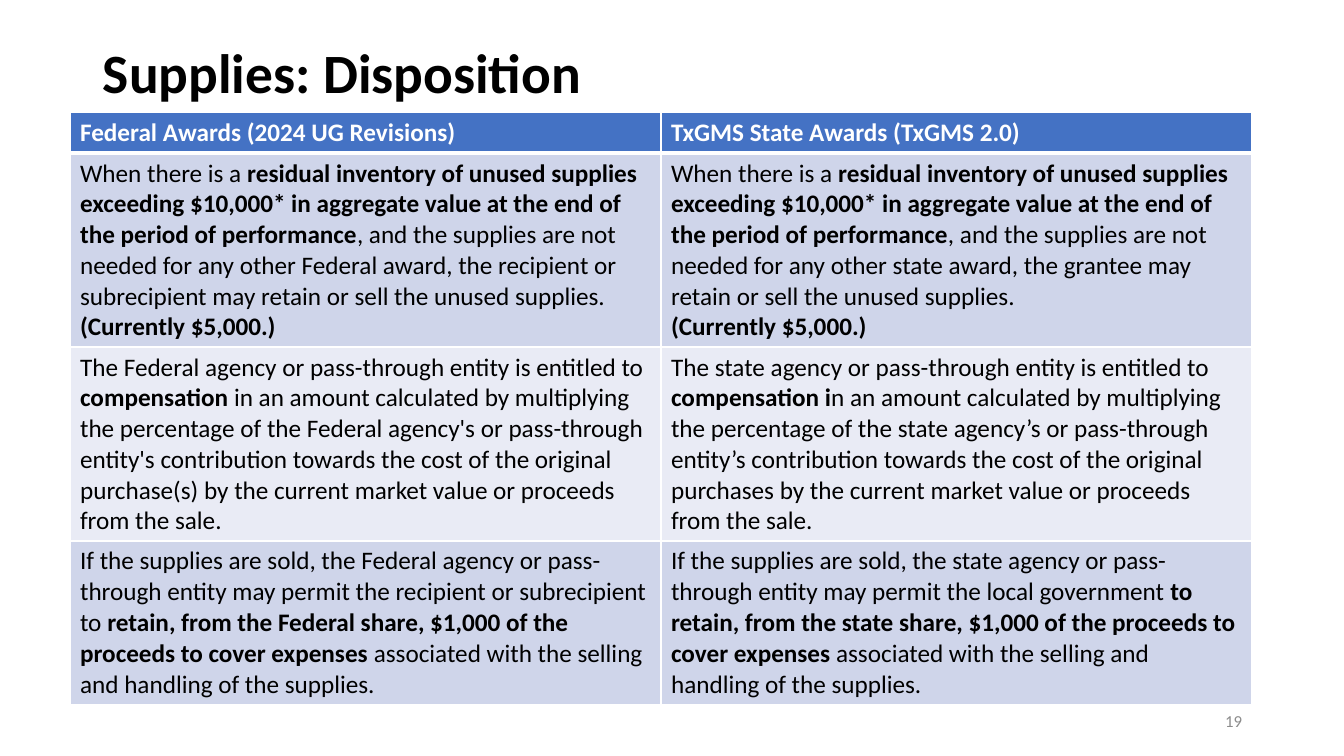
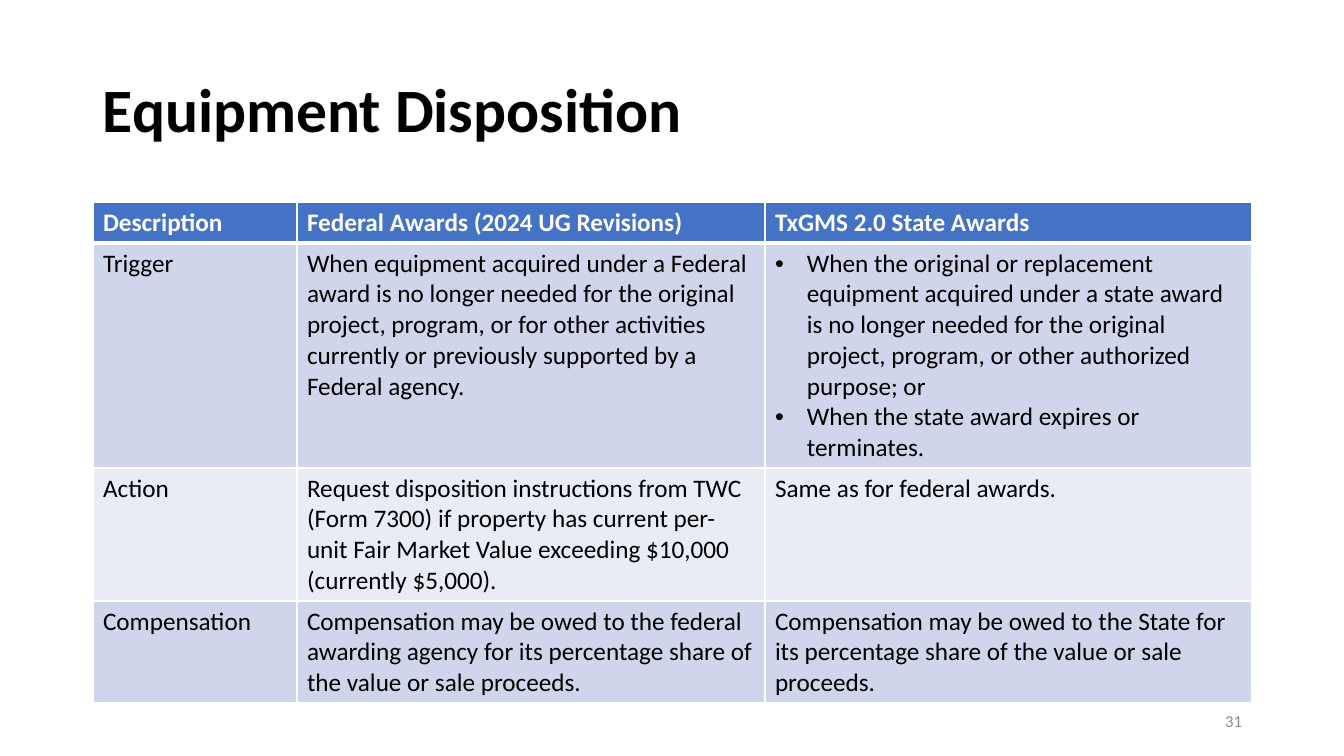
"""Build two slides that compare disposition rules in tables."""
import lxml.etree
import pptx
import pptx.dml.color
import pptx.enum.text
import pptx.oxml.ns
import pptx.util

PX_PER_INCH = 100.8
FONT = "Calibri"
BLACK, WHITE, GREY = "000000", "FFFFFF", "8C8C8C"
HEADER_FILL = "4472C4"
BAND_FILLS = ["CFD5EA", "E9EBF5"]
BULLET = "• "
BULLET_INDENT = 32
LEFT, RIGHT = 93, 1252
NUMBER_BOX = (950, 701, 302, 40)

SUPPLIES_ROWS = [
    ["Federal Awards (2024 UG Revisions)", "TxGMS State Awards (TxGMS 2.0)"],
    [
        "When there is a **residual inventory of unused supplies exceeding $10,000* in aggregate "
        "value at the end of the period of performance**, and the supplies are not needed for any "
        "other Federal award, the recipient or subrecipient may retain or sell the unused "
        "supplies. **(Currently $5,000.)**",
        "When there is a **residual inventory of unused supplies exceeding $10,000* in aggregate "
        "value at the end of the period of performance**, and the supplies are not needed for any "
        "other state award, the grantee may retain or sell the unused supplies.\n"
        "**(Currently $5,000.)**",
    ],
    [
        "The Federal agency or pass-through entity is entitled to **compensation **in an amount "
        "calculated by multiplying the percentage of the Federal agency's or pass-through "
        "entity's contribution towards the cost of the original purchase(s) by the current "
        "market value or proceeds from the sale.",
        "The state agency or pass-through entity is entitled to **compensation i**n an amount "
        "calculated by multiplying the percentage of the state agency’s or pass-through "
        "entity’s contribution towards the cost of the original purchases by the current "
        "market value or proceeds from the sale.",
    ],
    [
        "If the supplies are sold, the Federal agency or pass-through entity may permit the "
        "recipient or subrecipient to **retain, from the Federal share, $1,000 of the proceeds "
        "to cover expenses **associated with the selling and handling of the supplies.",
        "If the supplies are sold, the state agency or pass-through entity may permit the local "
        "government **to retain, from the state share, $1,000 of the proceeds to cover "
        "expenses** associated with the selling and handling of the supplies.",
    ],
]

EQUIPMENT_ROWS = [
    ["Description", "Federal Awards (2024 UG Revisions)", "TxGMS 2.0 State Awards"],
    [
        "Trigger",
        "When equipment acquired under a Federal award is no longer needed for the original "
        "project, program, or for other activities currently or previously supported by a "
        "Federal agency.",
        "• When the original or replacement equipment acquired under a state award is no longer "
        "needed for the original project, program, or other authorized purpose; or\n"
        "• When the state award expires or terminates.",
    ],
    [
        "Action",
        "Request disposition instructions from TWC (Form 7300) if property has current per-unit "
        "Fair Market Value exceeding $10,000 (currently $5,000).",
        "Same as for federal awards.",
    ],
    [
        "Compensation",
        "Compensation may be owed to the federal awarding agency for its percentage share of "
        "the value or sale proceeds.",
        "Compensation may be owed to the State for its percentage share of the value or sale "
        "proceeds.",
    ],
]


def px(length):
    """Turn pixels into EMU."""
    return pptx.util.Emu(round(length * 914400 / PX_PER_INCH))


def color(value):
    """Turn a hex string into a colour."""
    return pptx.dml.color.RGBColor.from_string(value)


def add_element(parent, tag, **attributes):
    """Append a DrawingML element to a parent and return it."""
    return lxml.etree.SubElement(parent, pptx.oxml.ns.qn(tag), **attributes)


def style_run(span, size, ink, bold):
    """Set the font of one run."""
    span.font.name = FONT
    span.font.size = pptx.util.Pt(size)
    span.font.bold = bold
    span.font.color.rgb = color(ink)


def add_label(page, box, text, size, ink, bold=False):
    """Place one line of vertically centred text and return its paragraph."""
    frame = page.shapes.add_textbox(*map(px, box)).text_frame
    frame.word_wrap = True
    frame.vertical_anchor = pptx.enum.text.MSO_ANCHOR.MIDDLE
    frame.text = text
    para = frame.paragraphs[0]
    style_run(para.runs[0], size, ink, bold)
    return para


def add_bullet(para):
    """Give a paragraph a round bullet with a hanging indent."""
    properties = para._p.get_or_add_pPr()
    properties.set("marL", str(px(BULLET_INDENT)))
    properties.set("indent", str(px(-BULLET_INDENT)))
    add_element(properties, "a:buFont", typeface="Arial")
    add_element(properties, "a:buChar", char=BULLET.strip())


def fill_text(cell, text, ink, header):
    """Write lines into a cell, with bold between double asterisks."""
    lines = text.split("\n")
    cell.text_frame.text = "\n".join("" for line in lines)
    for para, line in zip(cell.text_frame.paragraphs, lines):
        if line.startswith(BULLET):
            add_bullet(para)
        for index, part in enumerate(line.removeprefix(BULLET).split("**")):
            if part:
                span = para.add_run()
                span.text = part
                style_run(span, 18, ink, header or index % 2 == 1)


def add_borders(cell, top, bottom):
    """Draw white borders round a cell, with widths in points."""
    properties = cell._tc.get_or_add_tcPr()
    widths = {"a:lnL": 1, "a:lnR": 1, "a:lnT": top, "a:lnB": bottom}
    for index, (tag, width) in enumerate(widths.items()):
        line = add_element(properties, tag, w=str(pptx.util.Pt(width)))
        add_element(add_element(line, "a:solidFill"), "a:srgbClr", val=WHITE)
        properties.insert(index, line)


def add_comparison(page, left, top, widths, heights, rows):
    """Place a banded table with a header row."""
    size = (left, top, sum(widths), sum(heights))
    table = page.shapes.add_table(len(rows), len(widths), *map(px, size)).table
    for column, width in zip(table.columns, widths):
        column.width = px(width)
    for index, (height, texts) in enumerate(zip(heights, rows)):
        header = index == 0
        table.rows[index].height = px(height)
        for cell, text in zip(table.rows[index].cells, texts):
            cell.fill.solid()
            cell.fill.fore_color.rgb = color(HEADER_FILL if header else BAND_FILLS[(index - 1) % 2])
            add_borders(cell, 3 if index == 1 else 1, 3 if header else 1)
            fill_text(cell, text, WHITE if header else BLACK, header)


def add_page(deck, title, title_height, title_size, number):
    """Add a blank slide with a title and a slide number."""
    page = deck.slides.add_slide(deck.slide_layouts[6])
    heading = add_label(page, (LEFT, 40, RIGHT - LEFT, title_height), title, title_size, BLACK, True)
    heading.line_spacing = 0.9
    footer = add_label(page, NUMBER_BOX, str(number), 12, GREY)
    footer.alignment = pptx.enum.text.PP_ALIGN.RIGHT
    return page


def main():
    """Build and save the deck."""
    deck = pptx.Presentation()
    deck.slide_width, deck.slide_height = px(1344), px(756)
    supplies = add_page(deck, "Supplies: Disposition", 72, 39.6, 19)
    add_comparison(supplies, 70, 112, [591, 591], [41, 194, 194, 164], SUPPLIES_ROWS)
    equipment = add_page(deck, "Equipment Disposition", 146, 44, 31)
    add_comparison(equipment, LEFT, 202, [204, 468, 487], [41, 225, 133, 102], EQUIPMENT_ROWS)
    deck.save("out.pptx")


if __name__ == "__main__":
    main()
